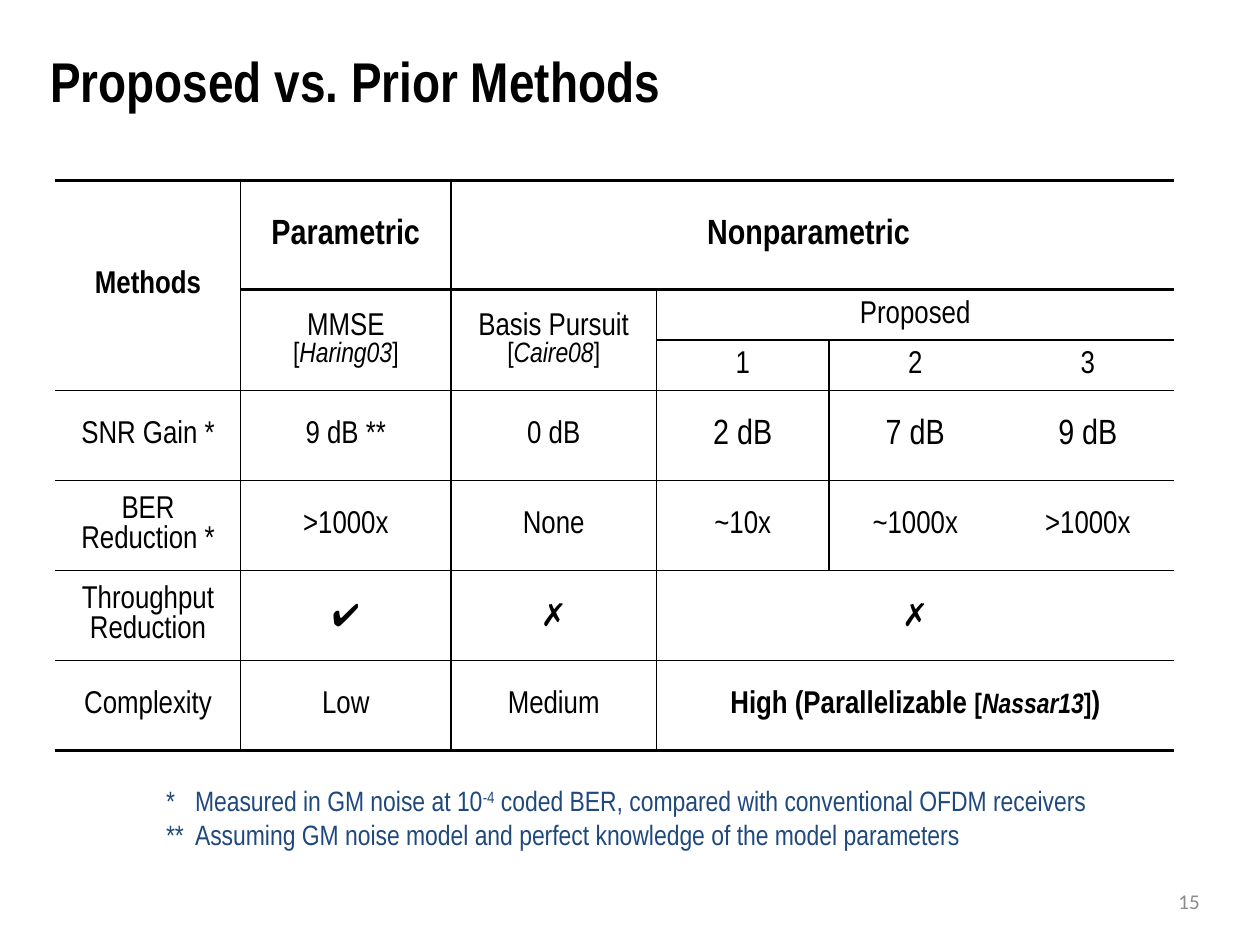
from dataclasses import dataclass

from lxml import etree
from pptx import Presentation
from pptx.dml.color import RGBColor
from pptx.enum import text
from pptx.oxml import ns
from pptx.util import Inches, Pt

BLACK = RGBColor(0x00, 0x00, 0x00)
WHITE = RGBColor(0xFF, 0xFF, 0xFF)
NAVY = RGBColor(0x1F, 0x49, 0x7D)
GRAY = RGBColor(0x8C, 0x8C, 0x8C)
NARROW = "Arial Narrow"
PLAIN_TABLE_STYLE = "{2D5ABB26-0587-4C30-8999-92F81FD0307C}"
SLIDE_WIDTH, SLIDE_HEIGHT = Inches(10), Inches(7.5)
COLUMN_WIDTHS = [1.47, 1.67, 1.63] + [1.37] * 3
HEADER_HEIGHT, HALF_ROW = 0.87, 3.57 / 10
ROW_HEIGHTS = [HEADER_HEIGHT] + [HALF_ROW] * 2 + [2 * HALF_ROW] * 4
THIN, THICK = 1, 2
MIDDLE, CENTER = text.MSO_ANCHOR.MIDDLE, text.PP_ALIGN.CENTER


@dataclass(frozen=True)
class Entry:
    row: int
    column: int
    label: str
    rows: int = 1
    columns: int = 1
    size: int = 18
    bold: bool = False
    citation: str = ""
    closing: str = ""
    font: str = NARROW


ENTRIES = [
    Entry(0, 0, "Methods", rows=3, bold=True),
    Entry(0, 1, "Parametric", size=20, bold=True),
    Entry(0, 2, "Nonparametric ", columns=4, size=20, bold=True),
    Entry(1, 1, "MMSE\n", rows=2, citation="Haring03"),
    Entry(1, 2, "Basis Pursuit\n", rows=2, citation="Caire08"),
    Entry(1, 3, "Proposed", columns=3),
    *(Entry(2, 3 + index, label) for index, label in enumerate("123")),
    *(Entry(3, column, label, size=20 if column > 2 else 18)
      for column, label in enumerate(["SNR Gain *", "9 dB **", "0 dB", "2 dB", "7 dB", "9 dB"])),
    *(Entry(4, column, label)
      for column, label in enumerate(
          ["BER Reduction *", ">1000x", "None", "~10x", "~1000x", ">1000x"])),
    Entry(5, 0, "Throughput Reduction"),
    Entry(5, 1, "✔", font="Arial"),
    Entry(5, 2, "✗", font="Arial"),
    Entry(5, 3, "✗", columns=3, font="Arial"),
    *(Entry(6, column, label) for column, label in enumerate(["Complexity", "Low", "Medium"])),
    Entry(6, 3, "High (Parallelizable ", columns=3, bold=True, citation="Nassar13", closing=")"),
]


def write(paragraph, content: str, *, size: int, font: str = NARROW, color: RGBColor = BLACK,
          bold: bool = False, italic: bool = False, baseline: int = 0) -> None:
    for index, line in enumerate(content.split("\n")):
        if index:
            paragraph.add_line_break()
        if not line:
            continue
        run = paragraph.add_run()
        run.text = line
        run.font.size, run.font.name = Pt(size), font
        run.font.bold, run.font.italic = bold, italic
        run.font.color.rgb = color
        if baseline:
            run._r.get_or_add_rPr().set("baseline", str(baseline * 1000))


def add_text_frame(slide, left: float, top: float, width: float, height: float,
                   anchor=text.MSO_ANCHOR.TOP):
    box = slide.shapes.add_textbox(
        int(SLIDE_WIDTH * left), int(SLIDE_HEIGHT * top),
        int(SLIDE_WIDTH * width), int(SLIDE_HEIGHT * height))
    frame = box.text_frame
    frame.word_wrap, frame.vertical_anchor = True, anchor
    return frame


def horizontal_rule(edge: int, column: int) -> int:
    if edge in (0, len(ROW_HEIGHTS)):
        return THICK
    if edge == 1:
        return THICK if column >= 1 else 0
    if edge == 2:
        return THIN if column >= 3 else 0
    return THIN


def vertical_rule(edge: int, row: int) -> int:
    ruled_rows = {1: range(0, 7), 2: range(0, 7), 3: range(1, 7), 4: range(2, 5)}
    return THIN if row in ruled_rows.get(edge, ()) else 0


def add_border(cell, side: str, width: int) -> None:
    line = etree.SubElement(cell._tc.get_or_add_tcPr(), ns.qn(f"a:ln{side}"), w=str(Pt(width)))
    if not width:
        etree.SubElement(line, ns.qn("a:noFill"))
        return
    fill = etree.SubElement(line, ns.qn("a:solidFill"))
    etree.SubElement(fill, ns.qn("a:srgbClr"), val=str(BLACK))


def style_cell(table, row: int, column: int, rows: int = 1, columns: int = 1) -> None:
    cell = table.cell(row, column)
    add_border(cell, "L", vertical_rule(column, row))
    add_border(cell, "R", vertical_rule(column + columns, row))
    add_border(cell, "T", horizontal_rule(row, column))
    add_border(cell, "B", horizontal_rule(row + rows, column))
    cell.fill.solid()
    cell.fill.fore_color.rgb = WHITE


def fill_cell(table, entry: Entry) -> None:
    for row in range(entry.row, entry.row + entry.rows):
        for column in range(entry.column, entry.column + entry.columns):
            if (row, column) == (entry.row, entry.column):
                style_cell(table, row, column, entry.rows, entry.columns)
            else:
                style_cell(table, row, column)
    cell = table.cell(entry.row, entry.column)
    if entry.rows * entry.columns > 1:
        cell.merge(table.cell(entry.row + entry.rows - 1, entry.column + entry.columns - 1))
    cell.vertical_anchor = MIDDLE
    paragraph = cell.text_frame.paragraphs[0]
    paragraph.alignment = CENTER
    write(paragraph, entry.label, size=entry.size, bold=entry.bold, font=entry.font)
    if entry.citation:
        for part, italic in (("[", False), (entry.citation, True), ("]", False)):
            write(paragraph, part, size=16, bold=entry.bold, italic=italic)
    write(paragraph, entry.closing, size=entry.size, bold=entry.bold)


def add_comparison(slide) -> None:
    frame = slide.shapes.add_table(
        len(ROW_HEIGHTS), len(COLUMN_WIDTHS), Inches(0.44), Inches(1.43),
        Inches(sum(COLUMN_WIDTHS)), Inches(sum(ROW_HEIGHTS)))
    table = frame.table
    table.first_row = table.horz_banding = False
    table._tbl.tblPr.find(ns.qn("a:tableStyleId")).text = PLAIN_TABLE_STYLE
    for column, width in zip(table.columns, COLUMN_WIDTHS):
        column.width = Inches(width)
    for row, height in zip(table.rows, ROW_HEIGHTS):
        row.height = Inches(height)
    for entry in ENTRIES:
        fill_cell(table, entry)


def add_footnotes(slide) -> None:
    frame = add_text_frame(slide, 0.122, 0.823, 0.76, 0.085)
    notes = [
        [("*\tMeasured in GM noise at 10", 0), ("-4", 30),
         (" coded BER, compared with conventional OFDM receivers", 0)],
        [("**\tAssuming GM noise model and perfect knowledge of the model parameters", 0)],
    ]
    for index, parts in enumerate(notes):
        paragraph = frame.add_paragraph() if index else frame.paragraphs[0]
        properties = paragraph._p.get_or_add_pPr()
        properties.set("marL", str(Inches(0.23)))
        properties.set("indent", str(-Inches(0.23)))
        for content, baseline in parts:
            write(paragraph, content, size=16, color=NAVY, baseline=baseline)


def main() -> None:
    presentation = Presentation()
    presentation.slide_width, presentation.slide_height = SLIDE_WIDTH, SLIDE_HEIGHT
    slide = presentation.slides.add_slide(presentation.slide_layouts[6])
    title = add_text_frame(slide, 0.03, 0.017, 0.931, 0.136, MIDDLE)
    write(title.paragraphs[0], "Proposed vs. Prior Methods", size=32, bold=True)
    number = add_text_frame(slide, 0.729, 0.927, 0.233, 0.053, MIDDLE).paragraphs[0]
    number.alignment = text.PP_ALIGN.RIGHT
    write(number, "15", size=12, font="Calibri", color=GRAY)
    add_comparison(slide)
    add_footnotes(slide)
    presentation.save("out.pptx")


if __name__ == "__main__":
    main()
